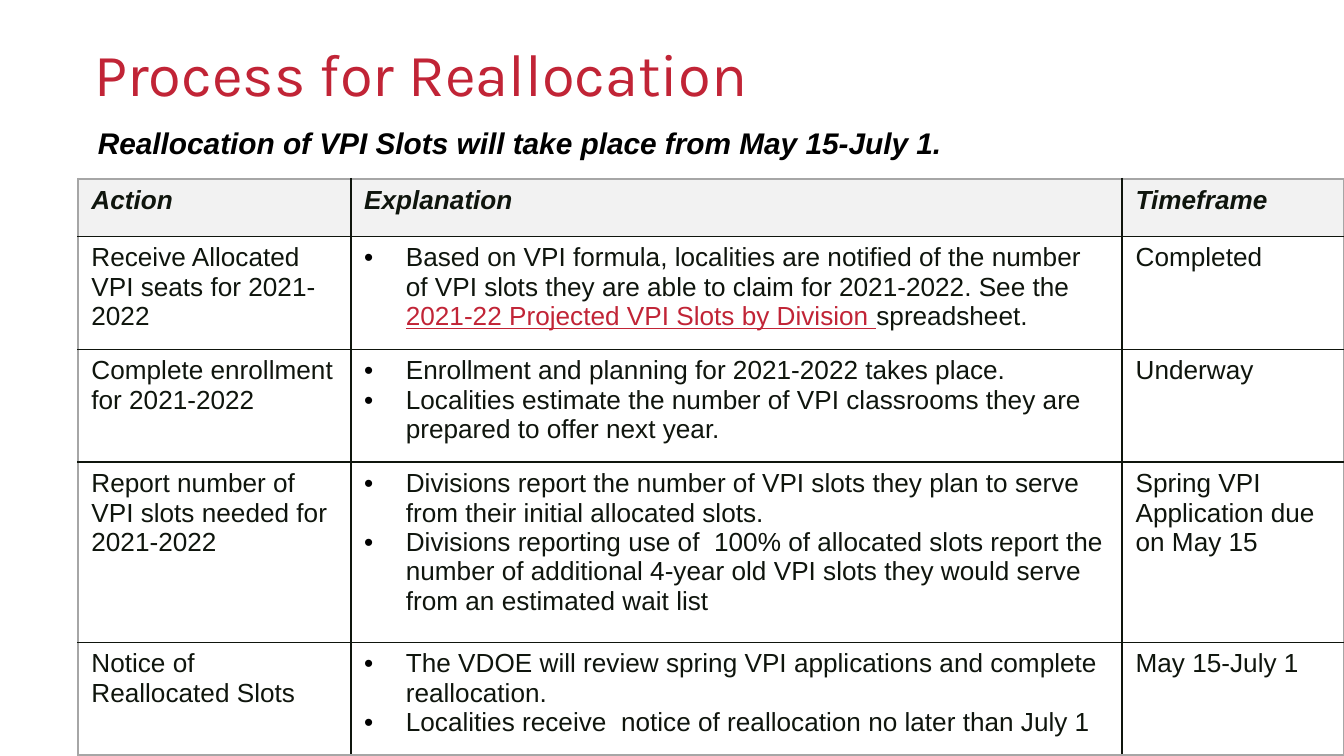
"""Build the slide on the process for reallocating VPI slots."""
from lxml import etree
from pptx import Presentation
from pptx import util as u
from pptx.dml.color import RGBColor
from pptx.enum import text
from pptx.oxml.ns import qn

HUES = {"red": "C12436", "black": "000000", "ink": "0F150D",
        "head": "F2F2F2", "white": "FFFFFF", "rim": "A6A6A6"}
COLS = [2.03, 5.74, 1.65]
TALL = [0.43, 0.84, 0.84, 1.34, 0.84]
LINK = "2021-22 Projected VPI Slots by Division "
HEADS = ["Action", "Explanation", "Timeframe"]
STEPS = [
    ("Receive Allocated VPI seats for 2021-2022",
     ["Based on VPI formula, localities are notified of the number of VPI slots "
      f"they are able to claim for 2021-2022. See the {LINK}spreadsheet."],
     "Completed"),
    ("Complete enrollment for 2021-2022",
     ["Enrollment and planning for 2021-2022 takes place.",
      "Localities estimate the number of VPI classrooms they are prepared to "
      "offer next year."],
     "Underway"),
    ("Report number of VPI slots needed for 2021-2022",
     ["Divisions report the number of VPI slots they plan to serve from their "
      "initial allocated slots.",
      "Divisions reporting use of  100% of allocated slots report the number of "
      "additional 4-year old VPI slots they would serve from an estimated wait list"],
     "Spring VPI Application due on May 15"),
    ("Notice of Reallocated Slots",
     ["The VDOE will review spring VPI applications and complete reallocation.",
      "Localities receive  notice of reallocation no later than July 1"],
     "May 15-July 1"),
]


def hue(name):
    """Return the named colour."""
    return RGBColor.from_string(HUES[name])


def style(font, size, color, name="Arial", strong=False):
    """Set the look of a font; strong means bold italic."""
    font.size, font.name = u.Pt(size), name
    font.bold = font.italic = strong
    font.color.rgb = hue(color)


def add_text(slide, words, place, *look, **more):
    """Add a text box with one styled paragraph and return its frame."""
    frame = slide.shapes.add_textbox(*map(u.Inches, place)).text_frame
    frame.word_wrap = True
    para = frame.paragraphs[0]
    para.text = words
    style(para.font, *look, **more)
    return frame


def add_bullet(para):
    """Give a paragraph a black bullet with a hanging indent."""
    props = para._p.get_or_add_pPr()
    props.set("marL", str(u.Inches(0.31)))
    props.set("indent", str(-u.Inches(0.31)))
    tint = etree.SubElement(props, qn("a:buClr"))
    etree.SubElement(tint, qn("a:srgbClr"), val=HUES["black"])
    etree.SubElement(props, qn("a:buFont"), typeface="Arial")
    etree.SubElement(props, qn("a:buChar"), char="•")


def add_runs(para, words):
    """Add words to a paragraph, with the link title red and underlined."""
    for i, part in enumerate(words.partition(LINK)):
        if part:
            run = para.add_run()
            run.text = part
            if i == 1:
                run.font.underline = True
                run.font.color.rgb = hue("red")


def add_edges(cell, rims):
    """Draw a one-point line on each side of a cell, pale on the table's rim."""
    props = cell._tc.get_or_add_tcPr()
    for i, (side, rim) in enumerate(zip("LRTB", rims)):
        line = etree.Element(qn(f"a:ln{side}"), w=str(u.Pt(1)))
        fill = etree.SubElement(line, qn("a:solidFill"))
        etree.SubElement(fill, qn("a:srgbClr"), val=HUES["rim" if rim else "ink"])
        props.insert(i, line)


def fill_cell(cell, words, head):
    """Fill a cell with text, or with bullets when given a list."""
    cell.fill.solid()
    cell.fill.fore_color.rgb = hue("head" if head else "white")
    listed = isinstance(words, list)
    frame = cell.text_frame
    for i, line in enumerate(words if listed else [words]):
        para = frame.add_paragraph() if i else frame.paragraphs[0]
        if listed:
            add_bullet(para)
        style(para.font, 14, "ink", strong=head)
        add_runs(para, line)


def add_grid(slide):
    """Add the table of steps."""
    rows = [HEADS, *STEPS]
    place = map(u.Inches, (0.58, 1.33, sum(COLS), sum(TALL)))
    grid = slide.shapes.add_table(len(rows), len(COLS), *place).table
    for col, wide in zip(grid.columns, COLS):
        col.width = u.Inches(wide)
    for r, (row, tall) in enumerate(zip(rows, TALL)):
        grid.rows[r].height = u.Inches(tall)
        for c, words in enumerate(row):
            cell = grid.cell(r, c)
            fill_cell(cell, words, r == 0)
            add_edges(cell, (c == 0, c == len(COLS) - 1,
                             r == 0, r == len(rows) - 1))


def main():
    """Build and save the slide."""
    deck = Presentation()
    deck.slide_width = u.Inches(10)
    deck.slide_height = u.Inches(10 * 9 / 16)
    slide = deck.slides.add_slide(deck.slide_layouts[6])
    title = add_text(slide, "Process for Reallocation", (0.63, 0.21, 9.37, 0.73),
                     32, "red", name="Karla")
    title.vertical_anchor = text.MSO_ANCHOR.MIDDLE
    title.margin_left = title.margin_right = u.Inches(0.07)
    title.margin_top = title.margin_bottom = u.Inches(0.04)
    title.paragraphs[0].line_spacing = 0.9
    add_text(slide, "Reallocation of VPI Slots will take place from May 15-July 1.",
             (0.63, 0.88, 6.75, 0.91), 16, "black", strong=True)
    add_grid(slide)
    deck.save("out.pptx")


if __name__ == "__main__":
    main()
